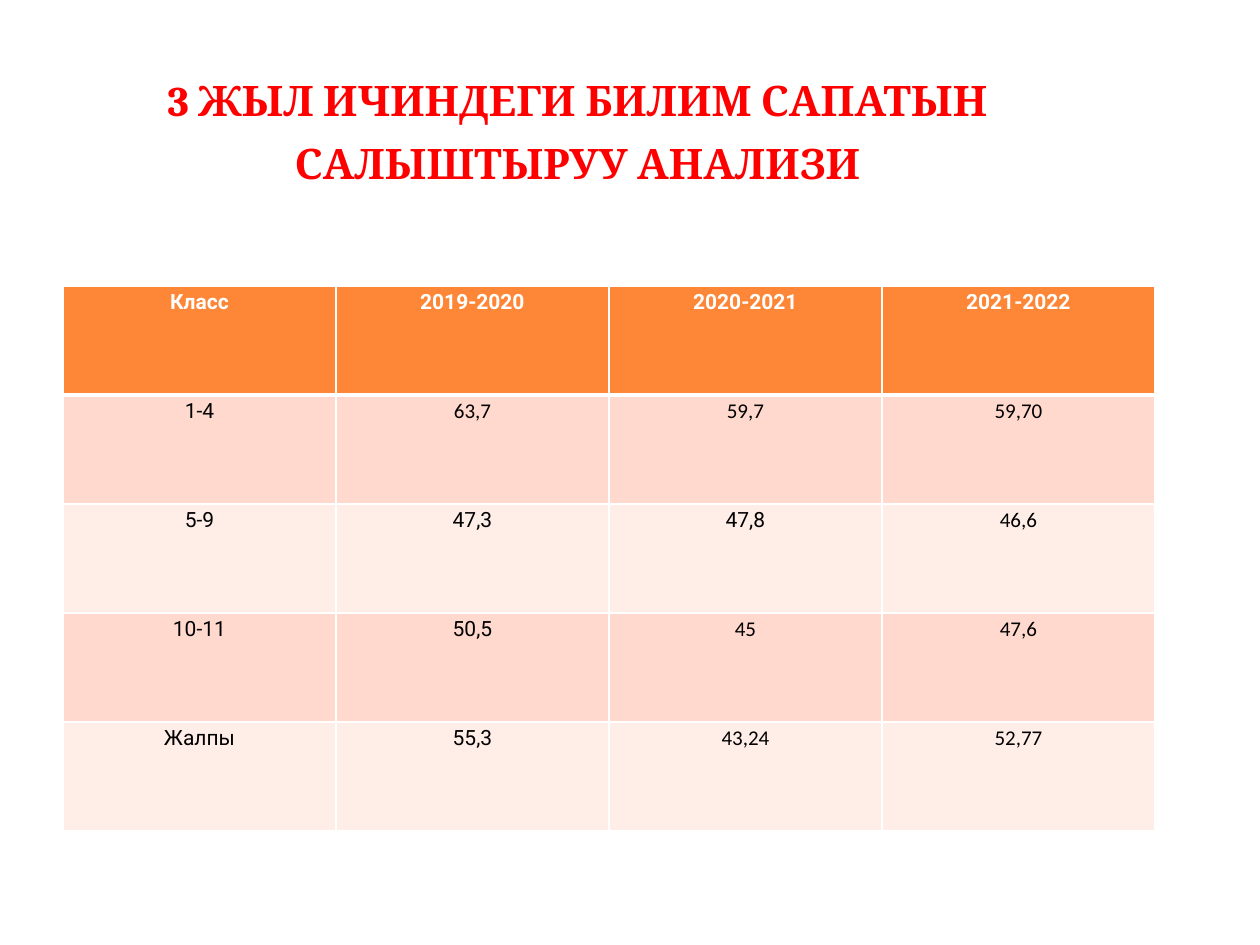
import pptx
import pptx.util
import pptx.dml.color
import pptx.enum.text
import pptx.oxml
import pptx.oxml.ns

SCALE = 914400 / 126
TITLE = "3 жыл ичиндеги билим сапатын салыштыруу анализи"
ROWS = [
    ["Класс", "2019-2020", "2020-2021", "2021-2022"],
    ["1-4", "63,7", "59,7", "59,70"],
    ["5-9", "47,3", "47,8", "46,6"],
    ["10-11", "50,5", "45", "47,6"],
    ["Жалпы", "55,3", "43,24", "52,77"],
]
ROBOTO = [4, 1, 3, 2, 2]
BANDS = ["FFEDE8", "FFD9CE"]


def px(count):
    return pptx.util.Emu(round(count * SCALE))


def color(code):
    return pptx.dml.color.RGBColor.from_string(code)


def style(para, face, size, code, bold):
    para.alignment = pptx.enum.text.PP_ALIGN.CENTER
    for run in para.runs:
        run.font.name = face
        run.font.size = pptx.util.Pt(size)
        run.font.color.rgb = color(code)
        run.font.bold = bold


def add_title(slide):
    title = slide.shapes.title
    title.left, title.top, title.width, title.height = map(px, (63, 38, 1029, 158))
    frame = title.text_frame
    frame.text = TITLE
    frame.word_wrap = True
    frame.auto_size = pptx.enum.text.MSO_AUTO_SIZE.NONE
    frame.vertical_anchor = pptx.enum.text.MSO_ANCHOR.BOTTOM
    para = frame.paragraphs[0]
    style(para, "Cambria", 30, "FF0000", True)
    para.runs[0].font._element.set("cap", "small")


def add_edge(cell, side, width):
    line = pptx.oxml.parse_xml(
        f'<a:ln{side} {pptx.oxml.ns.nsdecls("a")} w="{pptx.util.Pt(width)}">'
        '<a:solidFill><a:srgbClr val="FFFFFF"/></a:solidFill>'
        f'</a:ln{side}>'
    )
    cell._tc.get_or_add_tcPr().append(line)


def fill_cell(cell, text, row, col):
    head = row == 0
    cell.text_frame.text = text
    cell.margin_left = cell.margin_right = px(9)
    cell.margin_top = cell.margin_bottom = 0
    para = cell.text_frame.paragraphs[0]
    para.line_spacing = 1.15
    face = "Roboto" if col < ROBOTO[row] else "Calibri"
    style(para, face, 12, "FFFFFF" if head else "000000", head)
    for side in "LRTB":
        thick = (row, side) in [(0, "B"), (1, "T")]
        add_edge(cell, side, 3 if thick else 1)
    cell.fill.solid()
    cell.fill.fore_color.rgb = color("FE8637" if head else BANDS[row % 2])


def add_grid(slide):
    rows, cols = len(ROWS), len(ROWS[0])
    place = map(px, (63, 286, 273 * cols, 109 * rows))
    table = slide.shapes.add_table(rows, cols, *place).table
    for row, texts in enumerate(ROWS):
        for col, text in enumerate(texts):
            fill_cell(table.cell(row, col), text, row, col)


def main():
    deck = pptx.Presentation()
    deck.slide_width, deck.slide_height = px(1260), px(945)
    slide = deck.slides.add_slide(deck.slide_layouts[5])
    add_title(slide)
    add_grid(slide)
    deck.save("out.pptx")


if __name__ == "__main__":
    main()
